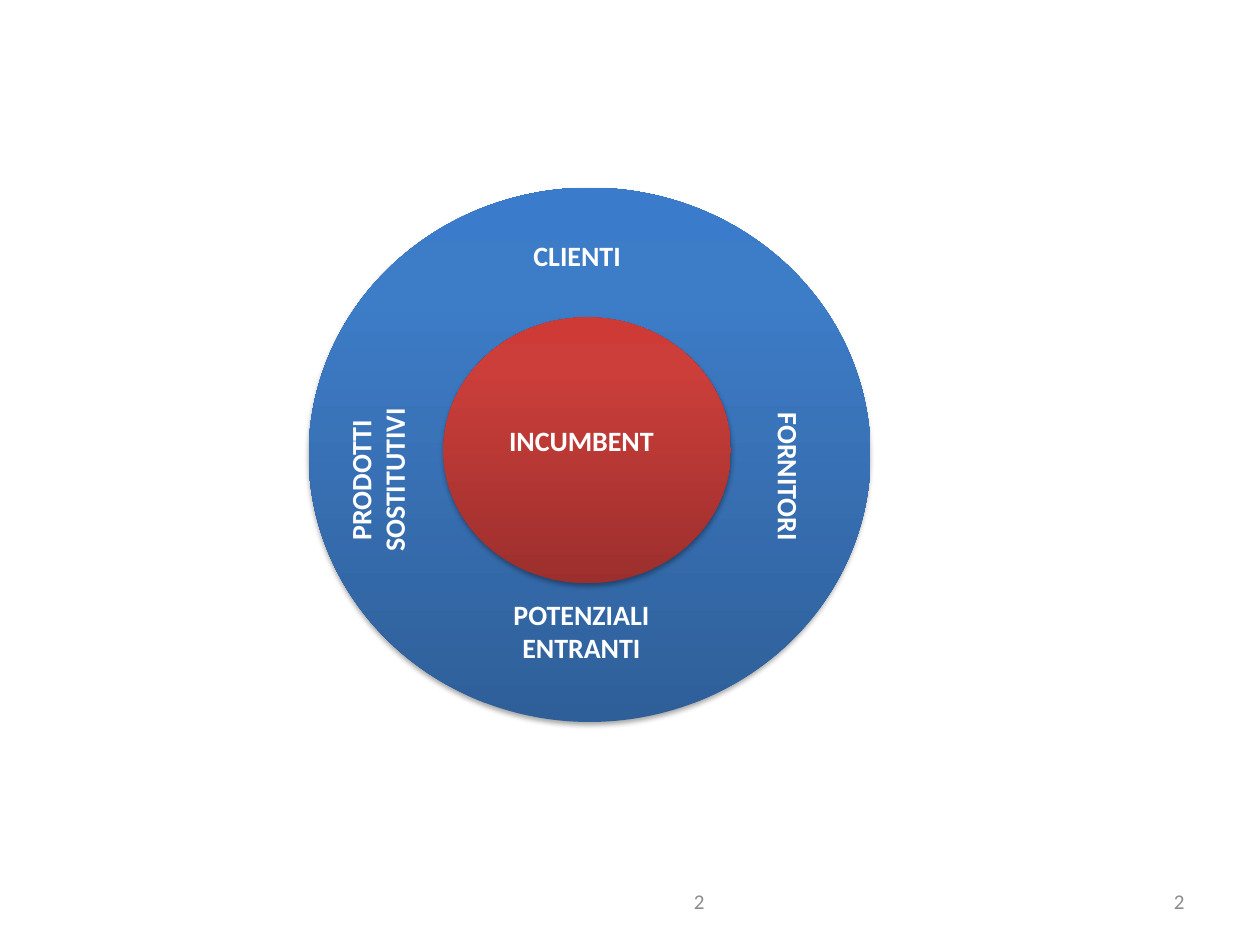
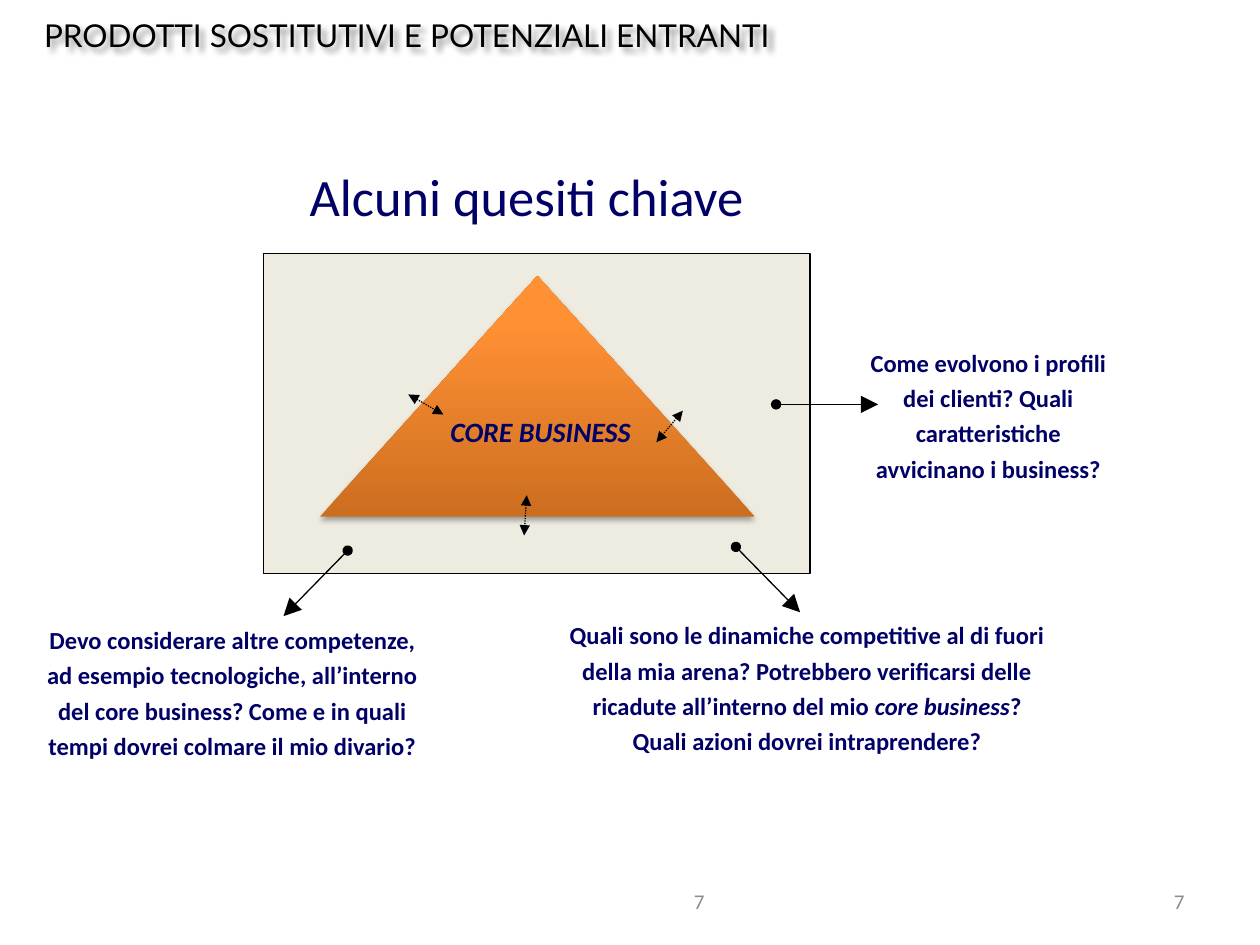
"""Two slides on competitive forces and the key questions around the core business."""
from copy import deepcopy
from dataclasses import dataclass
from typing import NamedTuple

from lxml.etree import SubElement
from pptx import Presentation
from pptx.dml.color import RGBColor
from pptx.enum.dml import MSO_LINE
from pptx.enum.shapes import MSO_CONNECTOR, MSO_SHAPE
from pptx.enum.text import MSO_ANCHOR, PP_ALIGN
from pptx.oxml.ns import qn
from pptx.util import Pt


@dataclass(frozen=True)
class Theme:
    """Colours, fonts and type sizes shared by the slides."""
    black: str = "000000"
    white: str = "FFFFFF"
    navy: str = "000066"
    grey: str = "8C8C8C"
    sand: str = "EEECE1"
    blue: tuple = ("2F5F99", "3D7CC7", "3A7CCB")
    red: tuple = ("9C2F2D", "CB3E3A", "CE3B37")
    orange: tuple = ("CC6E20", "FF9034", "FF9136")
    stops: tuple = (0, 0.8, 1)
    body_font: str = "Calibri"
    title_font: str = "Lato"
    heading: float = 30
    title: float = 18
    label: float = 16
    question: float = 14
    page: float = 12
    hairline: float = 0.75


THEME = Theme()


class Box(NamedTuple):
    """Left, top, width and height in points."""
    left: float
    top: float
    width: float
    height: float


class Style(NamedTuple):
    """Format of a block of text; insets run left, top, right, bottom."""
    size: float
    color: str
    bold: bool = False
    italic: bool = False
    font: str = THEME.body_font
    align: PP_ALIGN = PP_ALIGN.CENTER
    anchor: MSO_ANCHOR = MSO_ANCHOR.MIDDLE
    insets: tuple = (0, 0, 0, 0)
    spacing: float = 1


class Label(NamedTuple):
    """Text runs, each second one italic, with their place and rotation."""
    runs: tuple
    box: Box
    style: Style
    rotation: float = 0


class Body(NamedTuple):
    """A shaded, shadowed shape."""
    kind: MSO_SHAPE
    box: Box
    colors: tuple


class Shadow(NamedTuple):
    """Blur and distance in points, direction in degrees, opacity in percent."""
    blur: float
    distance: float
    direction: int
    opacity: int


class Arrow(NamedTuple):
    """A line with its end points in points."""
    start: tuple
    end: tuple
    dotted: bool = False


RING = Style(THEME.label, THEME.white, bold=True, anchor=MSO_ANCHOR.TOP,
             insets=(7.2, 3.6, 7.2, 3.6))
CORE = Style(THEME.label, THEME.navy, bold=True, italic=True)
HEADING = Style(THEME.heading, THEME.navy)
QUESTION = Style(THEME.question, THEME.navy, bold=True, spacing=1.2)
PAGE = Style(THEME.page, THEME.grey, align=PP_ALIGN.RIGHT, insets=(7.2, 3.6, 7.2, 3.6))
TITLE = Style(THEME.title, THEME.black, font=THEME.title_font, align=PP_ALIGN.LEFT,
              insets=(25.2, 3.6, 7.2, 3.6))

BODY_SHADOW = Shadow(3.1, 1.8, 90, 35)
TITLE_SHADOW = Shadow(3, 3, 45, 43)

FORCES = (
    Body(MSO_SHAPE.OVAL, Box(176.4, 107.3, 321.1, 305.3), THEME.blue),
    Body(MSO_SHAPE.OVAL, Box(253.4, 181.4, 164.2, 151.9), THEME.red),
)
FORCE_LABELS = (
    Label(("INCUMBENT",), Box(271.4, 238.3, 121.7, 32.4), RING),
    Label(("POTENZIALI ENTRANTI",), Box(271.4, 337.7, 121.7, 54.7), RING),
    Label(("PRODOTTI SOSTITUTIVI",), Box(157, 247, 126, 54.7), RING, 270),
    Label(("CLIENTI",), Box(275.8, 132.5, 108, 32.4), RING),
    Label(("FORNITORI",), Box(393.8, 256.3, 108, 32.4), RING, 90),
)
ARENA = Box(150.5, 144.7, 312.5, 182.9)
CORE_BUSINESS = Body(MSO_SHAPE.ISOSCELES_TRIANGLE, Box(182.9, 157.7, 248.4, 137.5),
                     THEME.orange)
QUESTION_LABELS = (
    Label(("CORE BUSINESS",), Box(255.6, 236.9, 106.6, 19.4), CORE),
    Label(("Alcuni quesiti chiave",), Box(162.7, 93.6, 276.5, 36), HEADING),
    Label(("Devo considerare altre competenze, ad esempio tecnologiche, all’interno del core "
           "business? Come e in quali tempi dovrei colmare il mio divario?",),
          Box(22.3, 353.5, 221, 81.4), QUESTION),
    Label(("Quali sono le dinamiche competitive al di fuori della mia arena? Potrebbero "
           "verificarsi delle ricadute all’interno del mio ", "core business",
           "? Quali azioni dovrei intraprendere?"),
          Box(324.7, 351.4, 272.9, 79.9), QUESTION),
    Label(("Come evolvono i profili dei clienti? Quali caratteristiche avvicinano i business?",),
          Box(493.9, 195.8, 141.8, 79.9), QUESTION),
)
ARROWS = (
    Arrow((198.7, 314.6), (162, 352.1)),
    Arrow((420.5, 312.5), (457.2, 349.9)),
    Arrow((443.5, 231.1), (501.8, 231.1)),
    Arrow((233.3, 225.4), (253.4, 236.9), dotted=True),
    Arrow((301, 283), (299.5, 306), dotted=True),
    Arrow((390.2, 234.7), (375.1, 252.7), dotted=True),
)


def points(values) -> list:
    """Turn plain numbers into point lengths."""
    return [Pt(value) for value in values]


def assign(target, values: dict) -> None:
    """Set each named attribute on the target."""
    for name, value in values.items():
        setattr(target, name, value)


def cast_shadow(shape, shadow: Shadow) -> None:
    """Give a shape a soft black shadow."""
    shape.shadow.inherit = False
    effects = shape._element.spPr.find(qn("a:effectLst"))
    outer = SubElement(effects, qn("a:outerShdw"), blurRad=str(Pt(shadow.blur)),
                       dist=str(Pt(shadow.distance)), dir=str(shadow.direction * 60000),
                       rotWithShape="0")
    color = SubElement(outer, qn("a:srgbClr"), val=THEME.black)
    SubElement(color, qn("a:alpha"), val=str(shadow.opacity * 1000))


def draw_label(slide, label: Label):
    """Add a text box and return it."""
    style = label.style
    holder = slide.shapes.add_textbox(*points(label.box))
    holder.rotation = label.rotation
    frame = holder.text_frame
    sides = ("margin_left", "margin_top", "margin_right", "margin_bottom")
    assign(frame, {"word_wrap": True, "vertical_anchor": style.anchor,
                   **dict(zip(sides, points(style.insets)))})
    paragraph = frame.paragraphs[0]
    assign(paragraph, {"alignment": style.align, "line_spacing": style.spacing})
    for index, text in enumerate(label.runs):
        run = paragraph.add_run()
        run.text = text
        assign(run.font, {"name": style.font, "size": Pt(style.size), "bold": style.bold,
                          "italic": style.italic or index % 2 == 1})
        run.font.color.rgb = RGBColor.from_string(style.color)
    return holder


def draw_body(slide, body: Body) -> None:
    """Add a shape shaded from bottom to top."""
    solid = slide.shapes.add_shape(body.kind, *points(body.box))
    solid.line.fill.background()
    solid.fill.gradient()
    solid.fill.gradient_angle = 90
    last = solid.fill.gradient_stops[1]._gs
    last.addnext(deepcopy(last))
    for stop, color, position in zip(solid.fill.gradient_stops, body.colors, THEME.stops):
        stop.color.rgb = RGBColor.from_string(color)
        stop.position = position
    cast_shadow(solid, BODY_SHADOW)


def draw_arena(slide) -> None:
    """Add the outlined field around the core business."""
    arena = slide.shapes.add_shape(MSO_SHAPE.RECTANGLE, *points(ARENA))
    arena.shadow.inherit = False
    arena.fill.solid()
    arena.fill.fore_color.rgb = RGBColor.from_string(THEME.sand)
    arena.line.color.rgb = RGBColor.from_string(THEME.black)
    arena.line.width = Pt(THEME.hairline)


def draw_arrow(slide, arrow: Arrow) -> None:
    """Add a dotted double arrow or a solid one that starts with a dot."""
    link = slide.shapes.add_connector(MSO_CONNECTOR.STRAIGHT,
                                      *points(arrow.start + arrow.end))
    link.line.color.rgb = RGBColor.from_string(THEME.black)
    link.line.width = Pt(THEME.hairline)
    if arrow.dotted:
        link.line.dash_style = MSO_LINE.ROUND_DOT
    start, size = ("triangle", "med") if arrow.dotted else ("oval", "lg")
    stroke = link._element.spPr.find(qn("a:ln"))
    SubElement(stroke, qn("a:headEnd"), type=start, w="med", len="med")
    SubElement(stroke, qn("a:tailEnd"), type="triangle", w=size, len=size)
    SubElement(link._element.spPr, qn("a:effectLst"))


def draw_page_numbers(slide, number: int) -> None:
    """Add the page number in the middle and at the right."""
    for left in (516.2, 241.9):
        draw_label(slide, Label((str(number),), Box(left, 500.4, 167.8, 28.8), PAGE))


def build_forces(slide) -> None:
    """Draw the incumbent and the forces around it."""
    draw_page_numbers(slide, 2)
    for force in FORCES:
        draw_body(slide, force)
    for label in FORCE_LABELS:
        draw_label(slide, label)


def build_questions(slide) -> None:
    """Draw the core business and the questions that surround it."""
    draw_arena(slide)
    draw_body(slide, CORE_BUSINESS)
    for label in QUESTION_LABELS:
        draw_label(slide, label)
    for arrow in ARROWS:
        draw_arrow(slide, arrow)
    draw_page_numbers(slide, 7)
    title = Label(("PRODOTTI SOSTITUTIVI E POTENZIALI ENTRANTI",), Box(0, -2.2, 720, 44.6), TITLE)
    cast_shadow(draw_label(slide, title), TITLE_SHADOW)


def main() -> None:
    """Build and save the presentation."""
    deck = Presentation()
    assign(deck, {"slide_width": Pt(720), "slide_height": Pt(540)})
    for build in (build_forces, build_questions):
        build(deck.slides.add_slide(deck.slide_layouts[6]))
    deck.save("out.pptx")


if __name__ == "__main__":
    main()
